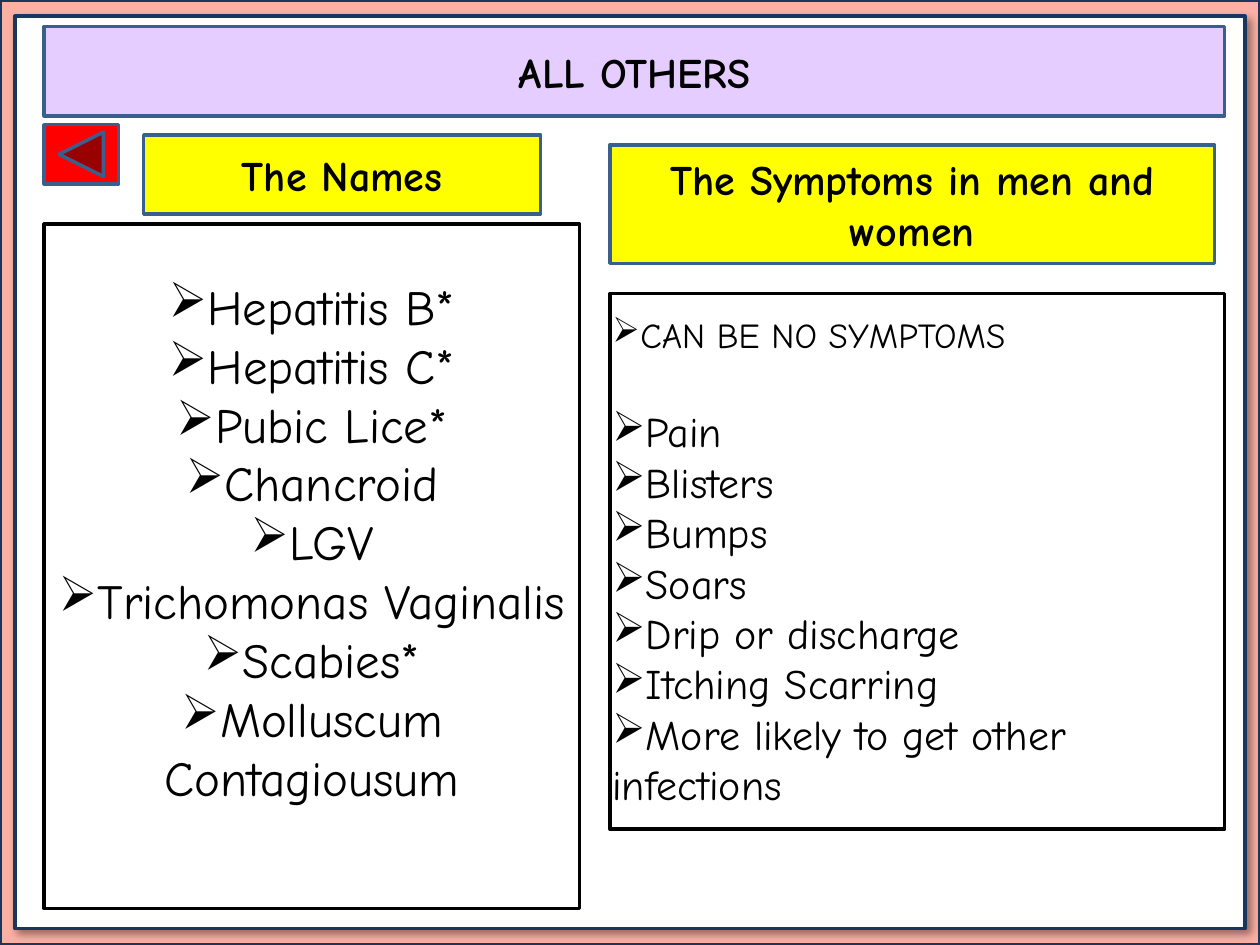
from dataclasses import dataclass

from lxml import etree
from pptx import Presentation
from pptx.dml.color import RGBColor
from pptx.enum.shapes import MSO_SHAPE
from pptx.enum.text import MSO_ANCHOR, PP_ALIGN
from pptx.oxml.ns import qn
from pptx.util import Pt

RECTANGLE = MSO_SHAPE.RECTANGLE
BACK_BUTTON = MSO_SHAPE.ACTION_BUTTON_BACK_OR_PREVIOUS
MIDDLE = MSO_ANCHOR.MIDDLE
LEFT, CENTER = PP_ALIGN.LEFT, PP_ALIGN.CENTER


@dataclass(frozen=True)
class Theme:
    font: str = "Comic Neue"
    black: str = "000000"
    white: str = "FFFFFF"
    salmon: str = "FCB0A3"
    navy: str = "17375E"
    blue: str = "3A5F8C"
    lilac: str = "E6CDFF"
    yellow: str = "FFFF00"
    red: str = "FF0000"
    small: float = 20
    medium: float = 24
    large: float = 28
    line: float = 2
    frame_line: float = 2.25


THEME = Theme()


@dataclass(frozen=True)
class Box:
    left: float
    top: float
    width: float
    height: float
    fill: str
    line: str = THEME.blue
    line_width: float = THEME.line
    geometry: int = RECTANGLE


@dataclass(frozen=True)
class Line:
    text: str
    size: float = THEME.medium
    bold: bool = False
    align: int = LEFT
    bullet: str = ""
    space_after: float = 0


def set_values(target, values: dict) -> None:
    for name, value in values.items():
        setattr(target, name, value)


def draw_box(page, box: Box):
    shape = page.shapes.add_shape(
        box.geometry, Pt(box.left), Pt(box.top), Pt(box.width), Pt(box.height))
    shape.shadow.inherit = False
    shape.fill.solid()
    shape.fill.fore_color.rgb = RGBColor.from_string(box.fill)
    shape.line.color.rgb = RGBColor.from_string(box.line)
    shape.line.width = Pt(box.line_width)
    return shape


def add_shadow(shape) -> None:
    effects = shape._element.spPr.find(qn("a:effectLst"))
    shadow = etree.SubElement(
        effects, qn("a:outerShdw"), blurRad=str(Pt(4)), dist=str(Pt(3)),
        dir=str(45 * 60000), algn="tl", rotWithShape="0")
    color = etree.SubElement(shadow, qn("a:srgbClr"), val=THEME.black)
    etree.SubElement(color, qn("a:alpha"), val="40000")


def write_lines(shape, lines: list[Line], margins: dict) -> None:
    frame = shape.text_frame
    set_values(frame, {"word_wrap": True, "vertical_anchor": MIDDLE, **margins})
    for index, line in enumerate(lines):
        para = frame.add_paragraph() if index else frame.paragraphs[0]
        set_values(para, {"alignment": line.align,
                          "space_after": Pt(line.space_after)})
        if line.bullet:
            properties = para._p.get_or_add_pPr()
            etree.SubElement(properties, qn("a:buChar"), char=line.bullet)
        span = para.add_run()
        span.text = line.text
        set_values(span.font, {"name": THEME.font, "size": Pt(line.size),
                               "bold": line.bold})
        span.font.color.rgb = RGBColor.from_string(THEME.black)


# Page frame
BACKDROP = Box(0, 0, 720, 540, THEME.salmon, THEME.navy, THEME.frame_line)
PANEL = Box(8.64, 9.36, 702.72, 521.28, THEME.white, THEME.navy, THEME.frame_line)

# Headings
HEADINGS = {
    "ALL OTHERS": Box(25.2, 15.12, 674.64, 51.12, THEME.lilac),
    "The Names": Box(82.08, 77.04, 226.8, 45.36, THEME.yellow),
    "The Symptoms in men and women": Box(348.48, 82.8, 345.6, 67.68, THEME.yellow),
}

# Lists
SYMPTOMS_BOX = Box(348.48, 167.76, 351.36, 306, THEME.white, THEME.black)
NAMES_BOX = Box(25.2, 128.16, 306, 390.96, THEME.white, THEME.black)
BULLET = "➢"
BLANK_LINE = 28.8
SYMPTOMS = ["Pain", "Blisters", "Bumps", "Soars", "Drip or discharge",
            "Itching Scarring", "More likely to get other infections"]
NAMES = ["Hepatitis B*", "Hepatitis C*", "Pubic Lice*", "Chancroid", "LGV",
         "Trichomonas Vaginalis", "Scabies*", "Molluscum Contagiousum"]
LIST_MARGINS = {"margin_left": Pt(1.44), "margin_right": Pt(1.44),
                "margin_top": Pt(0.72), "margin_bottom": Pt(0.72)}

BUTTON = Box(25.2, 71.28, 42.48, 33.84, THEME.red, geometry=BACK_BUTTON)


def main() -> None:
    deck = Presentation()
    set_values(deck, {"slide_width": Pt(720), "slide_height": Pt(540)})
    page = deck.slides.add_slide(deck.slide_layouts[6])

    draw_box(page, BACKDROP)
    add_shadow(draw_box(page, PANEL))

    for text, box in HEADINGS.items():
        write_lines(draw_box(page, box),
                    [Line(text, bold=True, align=CENTER)], {})

    symptom_lines = [Line("CAN BE NO SYMPTOMS", THEME.small, bullet=BULLET,
                          space_after=BLANK_LINE)]
    symptom_lines += [Line(text, bullet=BULLET) for text in SYMPTOMS]
    write_lines(draw_box(page, SYMPTOMS_BOX), symptom_lines, LIST_MARGINS)

    # The names sit above the middle by half a line
    name_lines = [Line(text, THEME.large, align=CENTER, bullet=BULLET)
                  for text in NAMES]
    write_lines(draw_box(page, NAMES_BOX), name_lines,
                {**LIST_MARGINS, "margin_bottom": Pt(0.72 + BLANK_LINE)})

    draw_box(page, BUTTON)
    deck.save("out.pptx")


if __name__ == "__main__":
    main()
